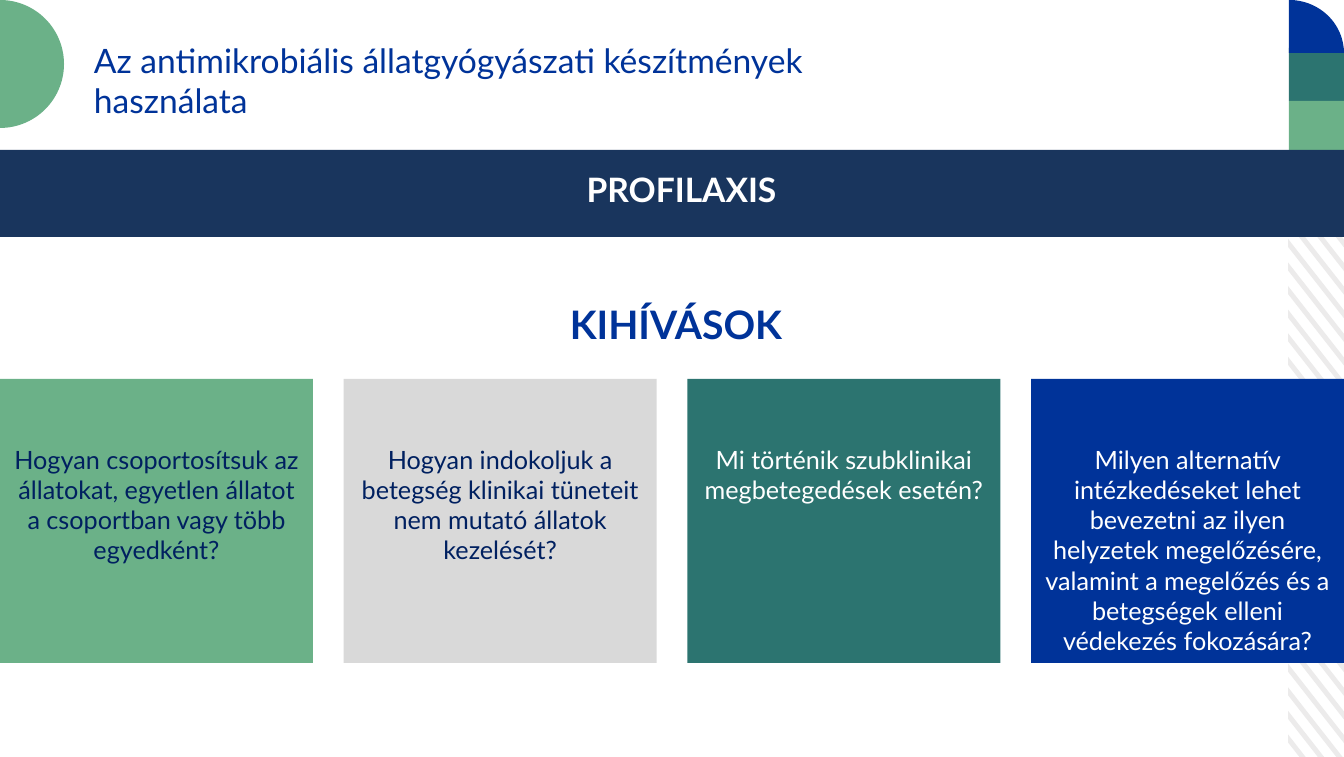
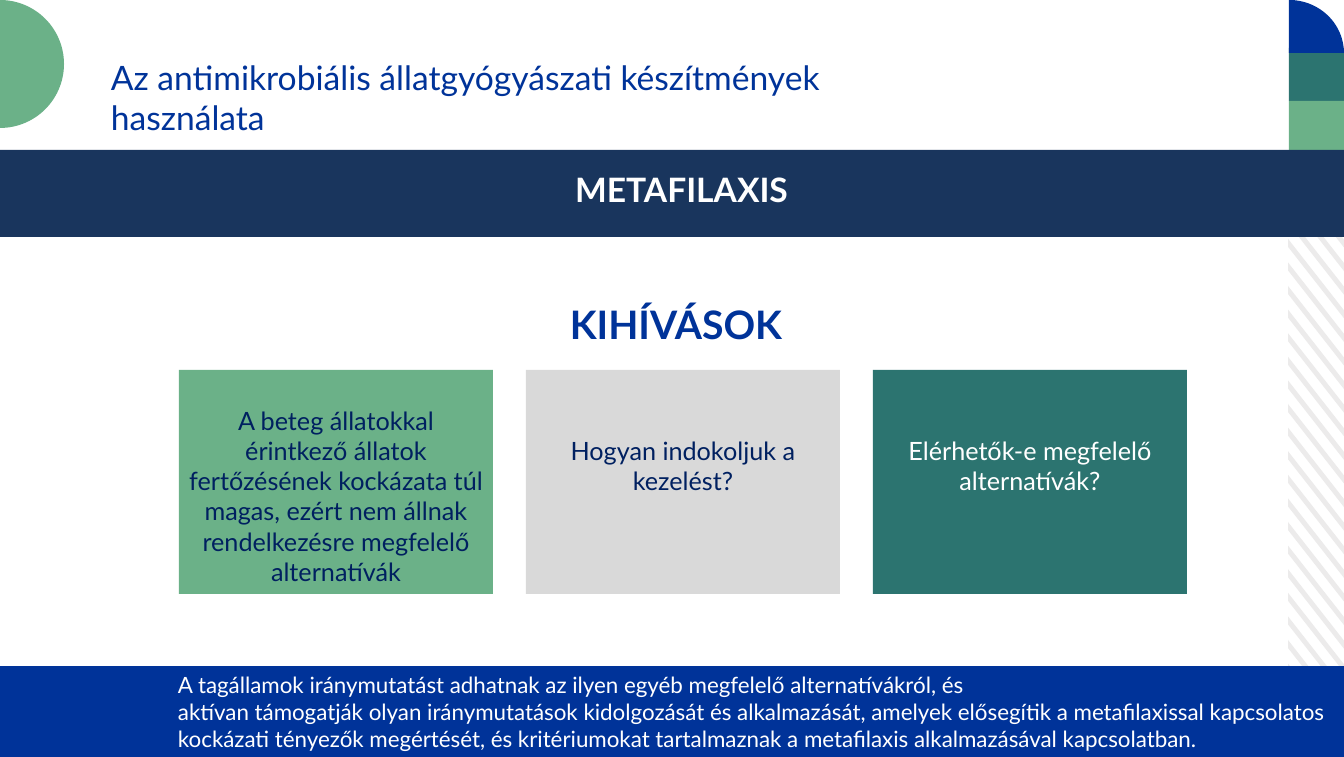
import math
from collections import namedtuple

from pptx import Presentation
from pptx import util as u
from pptx.dml.color import RGBColor
from pptx.enum import shapes, text

PX = 914400 / 100.8
WIDTH, HEIGHT = 1344, 757
FONT = "Lato"
BLUE, NAVY, INK = "003399", "19355D", "002060"
GREEN, TEAL, GREY = "6BB188", "2C7470", "D9D9D9"
WHITE, STRIPE = "FFFFFF", "ECEBEB"
LEFT, CENTER = text.PP_ALIGN.LEFT, text.PP_ALIGN.CENTER
CARD_COLOURS = [(GREEN, INK), (GREY, INK), (TEAL, WHITE), (BLUE, WHITE)]
TITLE = "Az antimikrobiális állatgyógyászati készítmények használata"
LINE = 30  # height of one line of card text

Box = namedtuple("Box", "left top width height")


def px(length):
    return u.Emu(round(length * PX))


def emu(box):
    return [px(length) for length in box]


def rgb(colour):
    return RGBColor.from_string(colour)


def paint(shape, colour):
    shape.shadow.inherit = False
    shape.fill.solid()
    shape.fill.fore_color.rgb = rgb(colour)
    shape.line.fill.background()


def add_rectangle(slide, box, colour):
    shape = slide.shapes.add_shape(shapes.MSO_SHAPE.RECTANGLE, *emu(box))
    paint(shape, colour)
    return shape


def write(shape, lines, size, colour, align=LEFT, bold=False, inset_left=10, inset_top=5):
    """Fill a shape with one paragraph per line, from the top down."""
    frame = shape.text_frame
    frame.word_wrap = True
    frame.vertical_anchor = text.MSO_ANCHOR.TOP
    frame.margin_left, frame.margin_right = px(inset_left), px(10)
    frame.margin_top, frame.margin_bottom = px(inset_top), px(5)
    for index, line in enumerate(lines):
        paragraph = frame.add_paragraph() if index else frame.paragraphs[0]
        paragraph.alignment = align
        run = paragraph.add_run()
        run.text = line
        run.font.name = FONT
        run.font.size = u.Pt(size)
        run.font.bold = bold
        run.font.color.rgb = rgb(colour)


def add_label(slide, box, line, size, colour, **style):
    write(slide.shapes.add_textbox(*emu(box)), [line], size, colour, **style)


def add_polygons(slide, polygons, colour):
    """Draw several closed outlines as one shape."""
    builder = None
    for polygon in polygons:
        start, *rest = [(px(x), px(y)) for x, y in polygon]
        if builder is None:
            builder = slide.shapes.build_freeform(*start, scale=1.0)
        else:
            builder.move_to(*start)
        builder.add_line_segments(rest, close=True)
    paint(builder.convert_to_shape(), colour)


def add_sector(slide, center, radii, last_angle, colour):
    """Draw the part of an ellipse from twelve o'clock clockwise to last_angle."""
    (x, y), (radius_x, radius_y) = center, radii
    angles = [math.radians(degree) for degree in range(0, last_angle + 1, 3)]
    arc = [(x + radius_x * math.sin(a), y - radius_y * math.cos(a)) for a in angles]
    add_polygons(slide, [[center] + arc], colour)


def add_stripes(slide, box):
    """Cover the box with diagonal stripes, cut at its top and bottom."""
    pitch, thickness, rise = 23.6, 8, 71.5
    bottom = box.top + box.height
    polygons = []
    for index in range(-3, 25):
        upper = box.top + 13 + index * pitch
        edges = []
        for y in (upper, upper + thickness):
            start = max(0, (box.top - y) / rise)
            end = min(1, (bottom - y) / rise)
            edges.append([(box.left + box.width * t, y + rise * t) for t in (start, end)])
        (upper_edge, lower_edge) = edges
        polygons.append(upper_edge + lower_edge[::-1])
    add_polygons(slide, polygons, STRIPE)


def add_side_column(slide, box):
    tile = 53
    add_stripes(slide, Box(box.left, box.top + 155, box.width, box.height - 155))
    for top, colour in ((48, TEAL), (101, GREEN)):
        add_rectangle(slide, Box(box.left + 1, box.top + top, box.width - 1, tile), colour)
    add_sector(slide, (box.left + 1, box.top + tile), (box.width - 1, tile), 90, BLUE)


def add_band(slide, box, heading):
    add_rectangle(slide, box, NAVY)
    label = Box(box.left + 51, box.top + 14, box.width - 83, 50)
    add_label(slide, label, heading, 24, WHITE, align=CENTER, bold=True)


def add_cards(slide, box, card_width, cards):
    """Spread cards evenly over the box; each is (lines left free, question)."""
    pitch = (box.width - card_width) / (len(cards) - 1)
    for index, ((free_lines, question), (fill, ink)) in enumerate(zip(cards, CARD_COLOURS)):
        card_box = Box(box.left + index * pitch, box.top, card_width, box.height)
        card = add_rectangle(slide, card_box, fill)
        write(card, [question], 18, ink, align=CENTER, inset_top=5 + free_lines * LINE)


def add_footer(slide, box, lines):
    write(add_rectangle(slide, box, BLUE), lines, 16, WHITE, inset_left=178)


def add_challenge_slide(presentation, heading, title_at, cards_box, card_width, cards):
    slide = presentation.slides.add_slide(presentation.slide_layouts[6])
    add_side_column(slide, Box(1288, 0, 56, HEIGHT))
    add_sector(slide, (0, 64), (64, 64), 180, GREEN)
    add_band(slide, Box(0, 150, WIDTH, 87), heading)
    add_cards(slide, cards_box, card_width, cards)
    add_label(slide, Box(340, 295, 672, 57), "KIHÍVÁSOK", 28, BLUE, align=CENTER, bold=True)
    add_label(slide, Box(*title_at, 883, 58), TITLE, 24, BLUE)
    return slide


def main():
    presentation = Presentation()
    presentation.slide_width, presentation.slide_height = px(WIDTH), px(HEIGHT)

    add_challenge_slide(
        presentation, "PROFILAXIS", (84, 35), Box(0, 379, WIDTH, 284), 313,
        [
            (2, "Hogyan csoportosítsuk az állatokat, egyetlen állatot a csoportban "
                "vagy több egyedként?"),
            (2, "Hogyan indokoljuk a betegség klinikai tüneteit nem mutató állatok "
                "kezelését?"),
            (2, "Mi történik szubklinikai megbetegedések esetén?"),
            (2, "Milyen alternatív intézkedéseket lehet bevezetni az ilyen helyzetek "
                "megelőzésére, valamint a megelőzés és a betegségek elleni védekezés "
                "fokozására?"),
        ],
    )

    metaphylaxis = add_challenge_slide(
        presentation, "METAFILAXIS", (101, 52), Box(179, 370, 1008, 224), 314,
        [
            (1, "A beteg állatokkal érintkező állatok fertőzésének kockázata túl magas, "
                "ezért nem állnak rendelkezésre megfelelő alternatívák"),
            (2, "Hogyan indokoljuk a kezelést?"),
            (2, "Elérhetők-e megfelelő alternatívák?"),
        ],
    )
    add_footer(metaphylaxis, Box(0, 666, WIDTH, 91), [
        "A tagállamok iránymutatást adhatnak az ilyen egyéb megfelelő alternatívákról, és",
        "aktívan támogatják olyan iránymutatások kidolgozását és alkalmazását, amelyek "
        "elősegítik a metafilaxissal kapcsolatos kockázati tényezők megértését, és "
        "kritériumokat tartalmaznak a metafilaxis alkalmazásával kapcsolatban.",
    ])
    presentation.save("out.pptx")


if __name__ == "__main__":
    main()
